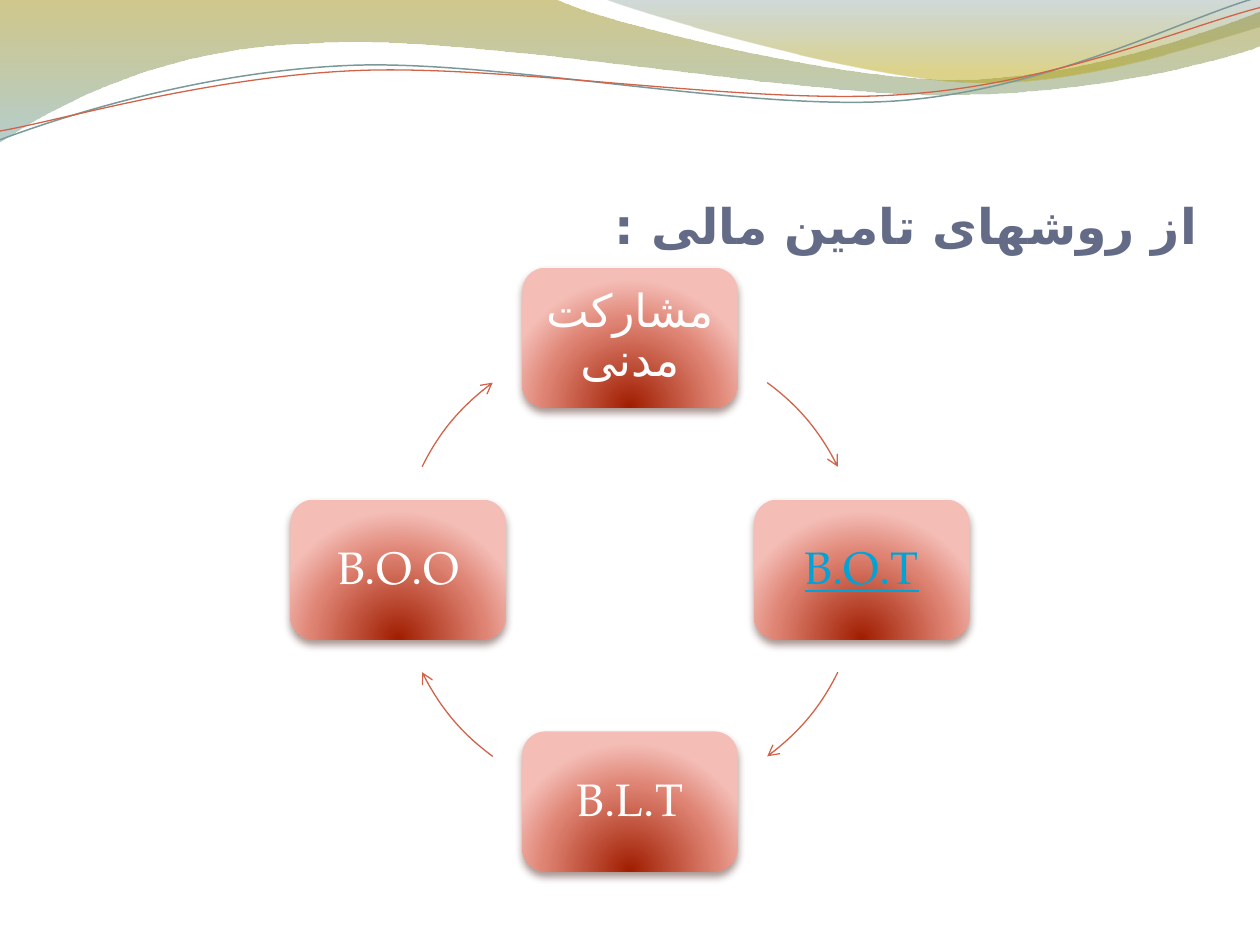
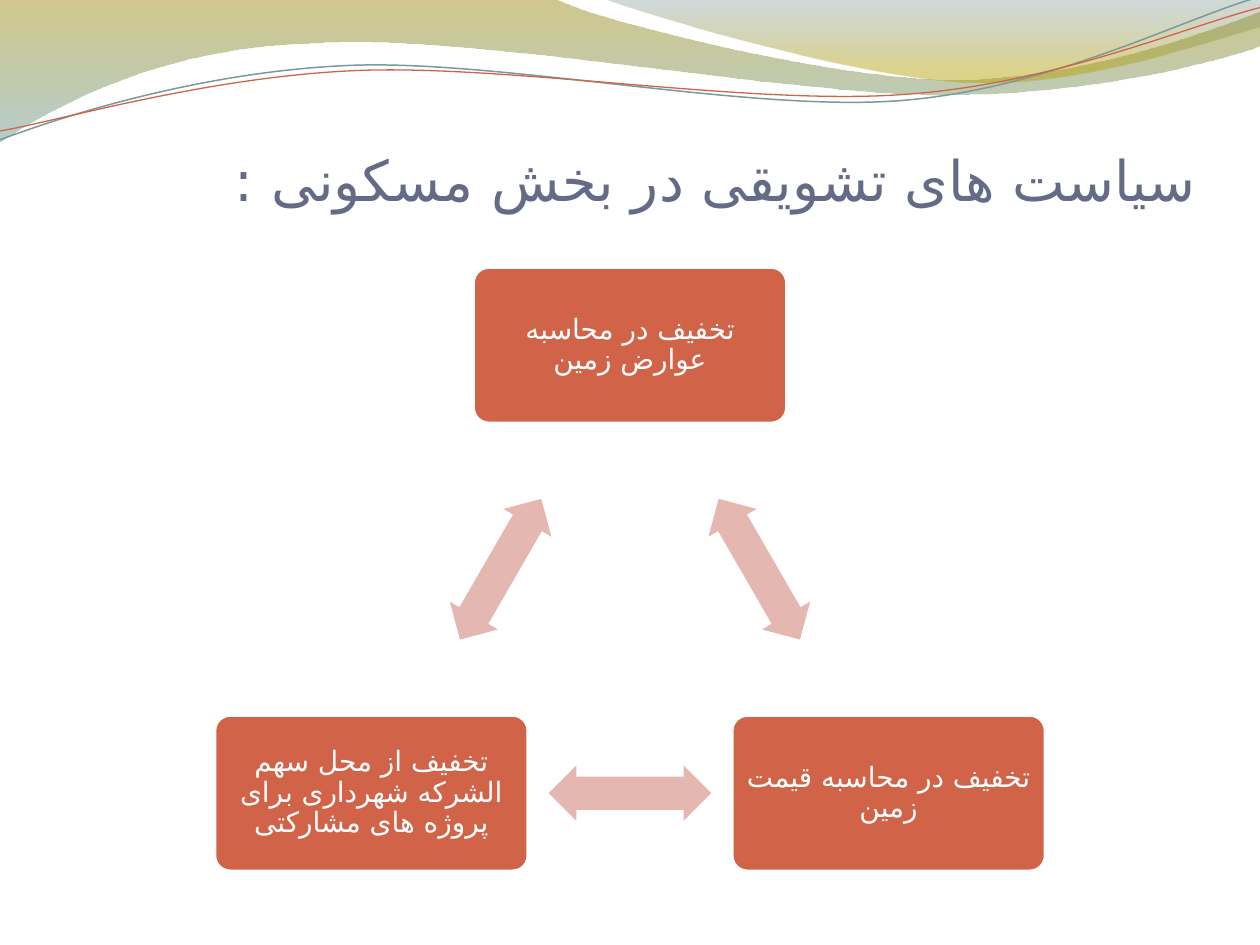
from math import cos, radians, sin, tan

from lxml.etree import SubElement
from pptx import Presentation
from pptx.dml.color import RGBColor
from pptx.enum.shapes import MSO_SHAPE
from pptx.enum.text import MSO_ANCHOR, MSO_AUTO_SIZE, PP_ALIGN
from pptx.oxml.ns import qn
from pptx.util import Inches, Pt

# Content
FUNDING_TITLE = "از روشهای تامین مالی :"
FUNDING_METHODS = ["مشارکت مدنی", "B.O.T", "B.L.T", "B.O.O"]  # clockwise from the top
LINKED_METHOD = "B.O.T"
POLICY_TITLE = "سیاست های تشویقی در بخش مسکونی :"
POLICIES = [
    "تخفیف در محاسبه عوارض زمین",
    "تخفیف در محاسبه قیمت زمین",
    "تخفیف از محل سهم الشرکه شهرداری برای پروژه های مشارکتی",
]

# Shared style
COLORS = {
    "title": "646B86", "accent": "D16349", "pale": "E5B7B1", "white": "FFFFFF",
    "link": "00A3D6", "shadow": "4B2218", "teal_line": "7C999A",
}
TITLE_FONT, BODY_FONT, PERSIAN_FONT = "Calibri", "TeX Gyre Pagella", "DejaVu Sans"

# Gradient stops: position %, colour, opacity %
OLIVE_TO_TEAL = [(0, "978500", 45), (100, "77A5A6", 55)]
GREY_TO_GOLD = [(0, "648484", 30), (80, "B49F00", 45)]
RED_GLOW = [(0, "A01D00", 100), (68, "DF8474", 100), (100, "F4BEB7", 100)]

# Outlines in inches: a pair is a corner, six numbers are a Bezier curve
WAVE_BANDS = [
    (OLIVE_TO_TEAL, (-0.01, -0.01, 10.02, 1.14), [
        (0, 0), (4.4, -0.01), (4.76, 0.17, 6.64, 0.63, 7.58, 0.63),
        (8.53, 0.63, 9.58, 0.26, 10, 0.09), (10.01, 0.36),
        (9.83, 0.44, 8.7, 0.76, 7.46, 0.75), (6.22, 0.75, 3.82, 0.28, 2.57, 0.34),
        (1.29, 0.36, 0.46, 0.83, -0.01, 1.13), (0, 0)]),
    (GREY_TO_GOLD, (4.79, -0.01, 5.21, 0.7), [
        (4.79, -0.01), (5.09, 0.11, 6.82, 0.62, 7.69, 0.65),
        (8.56, 0.69, 9.61, 0.32, 10, 0.21), (10, 0), (4.79, -0.01)]),
]
WAVE_TILT = -2.7
WAVE_LINES = [
    ("teal_line", 0.85, (-0.02, 0.22, 10.02, 0.71), [
        (0, 1.11), (0.48, 0.93, 1.58, 0.57, 2.77, 0.52),
        (3.95, 0.47, 5.93, 0.89, 7.13, 0.8), (8.33, 0.71, 9.38, 0.15, 9.98, -0.02)]),
    ("accent", 0.75, (-0.02, 0.3, 10.03, 0.58), [
        (0, 1.04), (0.47, 0.96, 1.64, 0.61, 2.83, 0.56),
        (4.03, 0.51, 5.97, 0.84, 7.17, 0.75), (8.36, 0.67, 9.41, 0.21, 10, 0.06)]),
]


def rgb(name):
    return RGBColor.from_string(COLORS[name])


def on_circle(center, radius, degrees):
    angle = radians(degrees)
    return center[0] + radius * cos(angle), center[1] + radius * sin(angle)


def arc_outline(center, radius, first, sweep):
    """One Bezier curve along a circle."""
    last = first + sweep
    start, end = on_circle(center, radius, first), on_circle(center, radius, last)
    reach = radius * 4 / 3 * tan(radians(sweep) / 4)
    return [start, (*on_circle(start, reach, first + 90),
                    *on_circle(end, reach, last - 90), *end)]


def turn(point, center, degrees):
    x, y = point[0] - center[0], point[1] - center[1]
    c, s = cos(radians(degrees)), sin(radians(degrees))
    return center[0] + x * c - y * s, center[1] + x * s + y * c


def add_outline(slide, outline, frame, closed=False, tilt=0):
    """Build corners and curves inside a frame of left, top, width, height."""
    left, top, width, height = frame
    center = (left + width / 2, top + height / 2)
    points = [turn(part[i:i + 2], center, -tilt) for part in outline for i in range(0, len(part), 2)]
    corners = [(Inches(x), Inches(y)) for x, y in points]
    builder = slide.shapes.build_freeform(*corners[0])
    builder.add_line_segments(corners[1:], close=closed)
    shape = builder.convert_to_shape()
    shape.shadow.inherit = False

    # Fit the outline to its frame
    outline_path = next(shape.element.iter(qn("a:path")))
    shift_x, shift_y = shape.left - Inches(left), shape.top - Inches(top)
    for point in outline_path.iter(qn("a:pt")):
        point.set("x", str(int(point.get("x")) + shift_x))
        point.set("y", str(int(point.get("y")) + shift_y))
    shape.left, shape.top = Inches(left), Inches(top)
    shape.width, shape.height = Inches(width), Inches(height)
    outline_path.set("w", str(shape.width))
    outline_path.set("h", str(shape.height))
    shape.rotation = tilt

    # Merge each three segments of a curve into one Bezier
    segments = iter(outline_path.findall(qn("a:lnTo")))
    for part in outline[1:]:
        segment = next(segments)
        if len(part) == 6:
            segment.tag = qn("a:cubicBezTo")
            for _ in range(2):
                other = next(segments)
                segment.append(other[0])
                outline_path.remove(other)
    return shape


def add_curve(slide, outline, frame, color, width, tilt=0):
    shape = add_outline(slide, outline, frame, tilt=tilt)
    shape.fill.background()
    shape.line.color.rgb = rgb(color)
    shape.line.width = Pt(width)
    return shape


def add_color(parent, color, opacity):
    element = SubElement(parent, qn("a:srgbClr"), val=color)
    if opacity < 100:
        SubElement(element, qn("a:alpha"), val=str(opacity * 1000))


def set_gradient(shape, stops, radial=False):
    shape.fill.gradient()
    gradient = shape.element.spPr.find(qn("a:gradFill"))
    for child in list(gradient):
        gradient.remove(child)
    stop_list = SubElement(gradient, qn("a:gsLst"))
    for position, color, opacity in stops:
        add_color(SubElement(stop_list, qn("a:gs"), pos=str(position * 1000)), color, opacity)
    if radial:
        glow = SubElement(gradient, qn("a:path"), {"path": "circle"})
        SubElement(glow, qn("a:fillToRect"), l="50000", t="130000", r="50000", b="-30000")
    else:
        SubElement(gradient, qn("a:lin"), ang="5400000", scaled="0")


def add_soft_shadow(shape):
    effects = shape.element.spPr.find(qn("a:effectLst"))
    shadow = SubElement(effects, qn("a:outerShdw"), blurRad=str(Pt(4.5)), dist=str(Pt(3)),
                        dir="5400000", rotWithShape="0")
    add_color(shadow, COLORS["shadow"], 48)


def add_centered(slide, kind, center, size):
    shape = slide.shapes.add_shape(
        kind, Inches(center[0] - size[0] / 2), Inches(center[1] - size[1] / 2),
        Inches(size[0]), Inches(size[1]))
    shape.shadow.inherit = False
    shape.line.fill.background()
    return shape


def write(shape, text, font, size, color, align, rtl):
    paragraph = shape.text_frame.paragraphs[0]
    paragraph.alignment = align
    if rtl:
        paragraph._p.get_or_add_pPr().set("rtl", "1")
    run = paragraph.add_run()
    run.text = text
    run.font.name, run.font.size = font, Pt(size)
    run.font.color.rgb = rgb(color)
    if not text.isascii():
        properties = run._r.get_or_add_rPr()
        properties.set("lang", "fa-IR")
        SubElement(properties, qn("a:cs"), typeface=PERSIAN_FONT)
    return paragraph, run


def set_frame(shape, anchor, left, top, right, bottom):
    frame = shape.text_frame
    frame.word_wrap = True
    frame.auto_size = MSO_AUTO_SIZE.NONE
    frame.vertical_anchor = anchor
    frame.margin_left, frame.margin_top = Inches(left), Inches(top)
    frame.margin_right, frame.margin_bottom = Inches(right), Inches(bottom)


def label(shape, text, size, color, margin, rtl):
    set_frame(shape, MSO_ANCHOR.MIDDLE, *[margin] * 4)
    paragraph, run = write(shape, text, BODY_FONT, size, color, PP_ALIGN.CENTER, rtl)
    paragraph.line_spacing = 0.9
    return run


def move_header_to_master(presentation, slide):
    """Draw the wave header and hand it to the master, behind its placeholders."""
    header = []
    for stops, frame, outline in WAVE_BANDS:
        band = add_outline(slide, outline, frame, closed=True)
        set_gradient(band, stops)
        band.line.fill.background()
        header.append(band)
    for color, width, frame, outline in WAVE_LINES:
        header.append(add_curve(slide, outline, frame, color, width, WAVE_TILT))
    master_tree = presentation.slide_master.shapes.element
    for index, shape in enumerate(header):
        master_tree.insert(2 + index, shape.element)


def start_slide(presentation, title_text, size, bold, anchor):
    slide = presentation.slides.add_slide(presentation.slide_layouts[5])
    title = slide.shapes.title
    title.left, title.top = Inches(0.5), Inches(0.77)
    title.width, title.height = Inches(9), Inches(1.25)
    set_frame(title, anchor, 0, 0.05, 0, 0)
    run = write(title, title_text, TITLE_FONT, size, "title", PP_ALIGN.RIGHT, True)[1]
    run.font.bold = bold
    return slide


def build_funding_slide(presentation):
    slide = start_slide(presentation, FUNDING_TITLE, 28, True, MSO_ANCHOR.BOTTOM)
    move_header_to_master(presentation, slide)
    center, radius = (5, 4.52), 1.84
    ring = (center[0] - radius, center[1] - radius, 2 * radius, 2 * radius)
    for index, method in enumerate(FUNDING_METHODS):
        angle = 90 * index - 90
        # Method box
        box = add_centered(slide, MSO_SHAPE.ROUNDED_RECTANGLE,
                           on_circle(center, radius, angle), (1.71, 1.11))
        set_gradient(box, RED_GLOW, radial=True)
        add_soft_shadow(box)
        linked = method == LINKED_METHOD
        run = label(box, method, 26, "link" if linked else "white", 0.11, False)
        if linked:
            run.font.underline = True
        # Arc to the next box, nearer the side boxes than the top and bottom ones
        first = angle + (36.3 if index % 2 == 0 else 26.3)
        arc = add_curve(slide, arc_outline(center, radius, first, 27.4), ring, "accent", 0.75)
        SubElement(arc.line._get_or_add_ln(), qn("a:tailEnd"), type="arrow")


def build_policy_slide(presentation):
    slide = start_slide(presentation, POLICY_TITLE, 32, False, MSO_ANCHOR.MIDDLE)
    center, radius = (5, 5.11), 2.37
    for index, policy in enumerate(POLICIES):
        angle = 120 * index - 90
        # Policy box
        box = add_centered(slide, MSO_SHAPE.ROUNDED_RECTANGLE,
                           on_circle(center, radius, angle), (2.49, 1.24))
        box.adjustments[0] = 0.1
        box.fill.solid()
        box.fill.fore_color.rgb = rgb("accent")
        box.line.color.rgb = rgb("white")
        box.line.width = Pt(2)
        label(box, policy, 16, "white", 0.07, True)
        # Arrow halfway to the next box
        arrow = add_centered(slide, MSO_SHAPE.LEFT_RIGHT_ARROW,
                             on_circle(center, radius / 2, angle + 60), (1.29, 0.44))
        arrow.adjustments[0], arrow.adjustments[1] = 0.6, 0.5
        arrow.rotation = angle + 150
        arrow.fill.solid()
        arrow.fill.fore_color.rgb = rgb("pale")


def main():
    presentation = Presentation()
    presentation.slide_width, presentation.slide_height = Inches(10), Inches(7.5)
    build_funding_slide(presentation)
    build_policy_slide(presentation)
    presentation.save("out.pptx")


if __name__ == "__main__":
    main()
